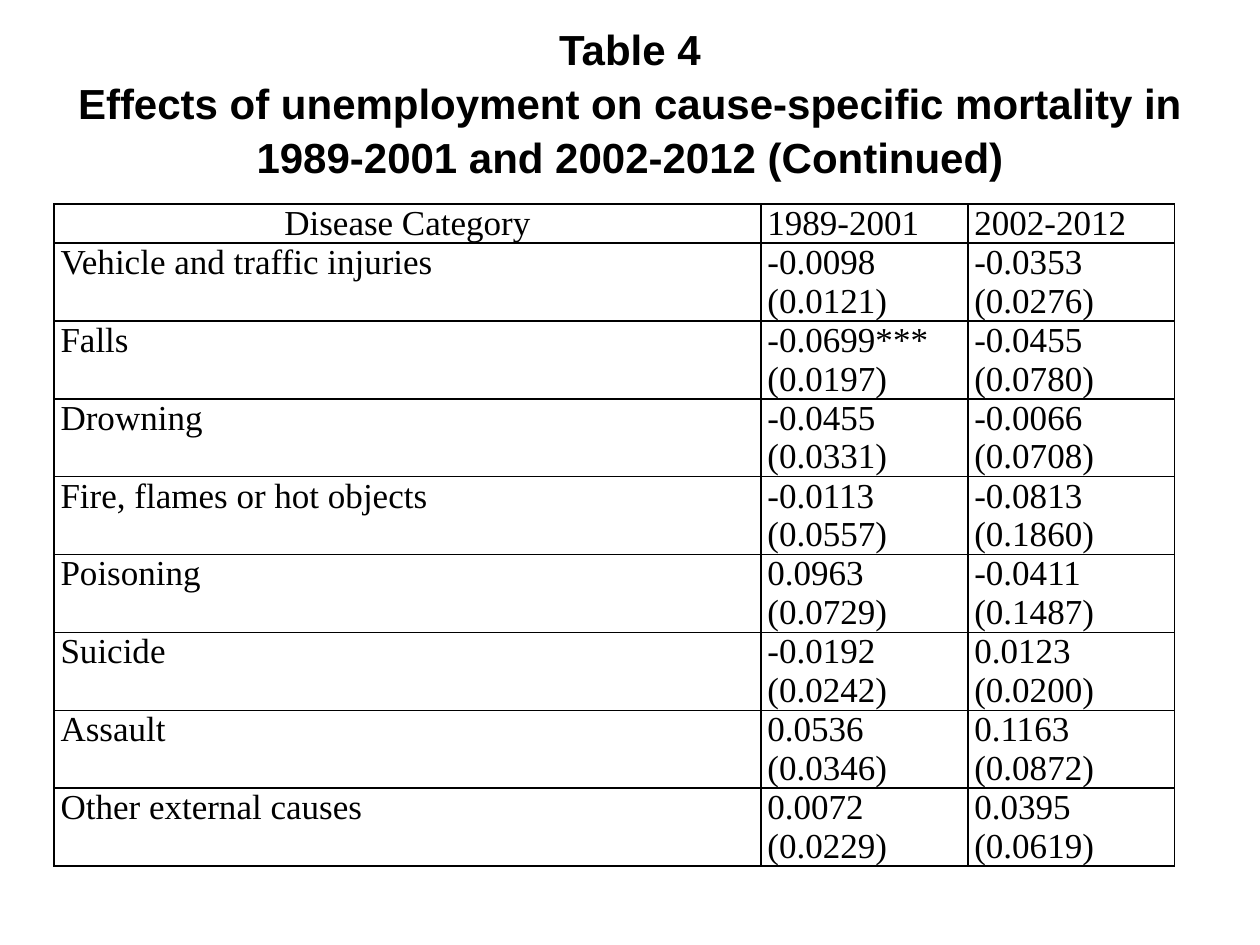
from copy import deepcopy

from lxml.etree import SubElement
from pptx import Presentation
from pptx.dml.color import RGBColor
from pptx.enum.text import MSO_ANCHOR, MSO_AUTO_SIZE, PP_ALIGN as Align
from pptx.oxml.ns import qn
from pptx.util import Cm, Pt

TITLE = ("Table 4\vEffects of unemployment on cause-specific mortality in "
         "1989-2001 and 2002-2012 (Continued)")
HEADER = ("Disease Category", "1989-2001", "2002-2012")
# Cause, then estimate and standard error for each period
EFFECTS = [
    ("Vehicle and traffic injuries", "-0.0098\n(0.0121)", "-0.0353\n(0.0276)"),
    ("Falls", "-0.0699***\n(0.0197)", "-0.0455\n(0.0780)"),
    ("Drowning", "-0.0455\n(0.0331)", "-0.0066\n(0.0708)"),
    ("Fire, flames or hot objects", "-0.0113\n(0.0557)", "-0.0813\n(0.1860)"),
    ("Poisoning", "0.0963\n(0.0729)", "-0.0411\n(0.1487)"),
    ("Suicide", "-0.0192\n(0.0242)", "0.0123\n(0.0200)"),
    ("Assault", "0.0536\n(0.0346)", "0.1163\n(0.0872)"),
    ("Other external causes", "0.0072\n(0.0229)", "0.0395\n(0.0619)"),
]

BLACK = RGBColor(0, 0, 0)
COL_WIDTHS = (Cm(14.25), Cm(4.17), Cm(4.17))
HEADER_HEIGHT, ROW_HEIGHT = Cm(0.79), Cm(1.57)


def put_text(tf, text, *, font, size, bold=False, align=Align.JUSTIFY, spacing=None):
    """Fill a text frame: \\n starts a paragraph, \\v a line."""
    tf.text = text
    for p in tf.paragraphs:
        p.alignment = align
        if spacing:
            p.line_spacing = spacing
        for r in p.runs:
            f = r.font
            f.name, f.size, f.bold = font, Pt(size), bold
            f.color.rgb = BLACK
        # Line breaks take the size of the text around them
        for br in p._p.findall(qn("a:br")):
            br.insert(0, deepcopy(p.runs[0]._r.rPr))


def add_borders(cell):
    tc_pr = cell._tc.get_or_add_tcPr()
    for i, side in enumerate(("lnL", "lnR", "lnT", "lnB")):
        ln = SubElement(tc_pr, qn(f"a:{side}"), w=str(Pt(1)))
        fill = SubElement(ln, qn("a:solidFill"))
        SubElement(fill, qn("a:srgbClr"), val=str(BLACK))
        tc_pr.remove(ln)
        tc_pr.insert(i, ln)  # borders come before the fill


def add_title(s):
    title = s.shapes.title
    title.left, title.top, title.width, title.height = Cm(1.27), Cm(0.53), Cm(22.86), Cm(3)
    tf = title.text_frame
    tf.word_wrap = True
    tf.auto_size = MSO_AUTO_SIZE.NONE
    tf.vertical_anchor = MSO_ANCHOR.MIDDLE
    put_text(tf, TITLE, font="Arial", size=24, bold=True, align=Align.CENTER, spacing=1.07)


def add_effects_table(s):
    rows = [HEADER, *EFFECTS]
    height = HEADER_HEIGHT + ROW_HEIGHT * len(EFFECTS)
    table = s.shapes.add_table(len(rows), len(HEADER), Cm(1.09), Cm(4.11),
                               sum(COL_WIDTHS), height).table
    table.first_row = table.horz_banding = False
    for col, width in zip(table.columns, COL_WIDTHS):
        col.width = width
    for i, values in enumerate(rows):
        table.rows[i].height = ROW_HEIGHT if i else HEADER_HEIGHT
        for j, value in enumerate(values):
            cell = table.cell(i, j)
            cell.margin_left = cell.margin_right = Cm(0.13)
            cell.margin_top = cell.margin_bottom = 0
            cell.fill.background()
            add_borders(cell)
            put_text(cell.text_frame, value, font="Times New Roman", size=20,
                     align=Align.CENTER if i == j == 0 else Align.JUSTIFY)


def main():
    prs = Presentation()
    prs.slide_width, prs.slide_height = Cm(25.4), Cm(19.05)
    s = prs.slides.add_slide(prs.slide_layouts[5])
    add_title(s)
    add_effects_table(s)
    prs.save("out.pptx")


if __name__ == "__main__":
    main()
